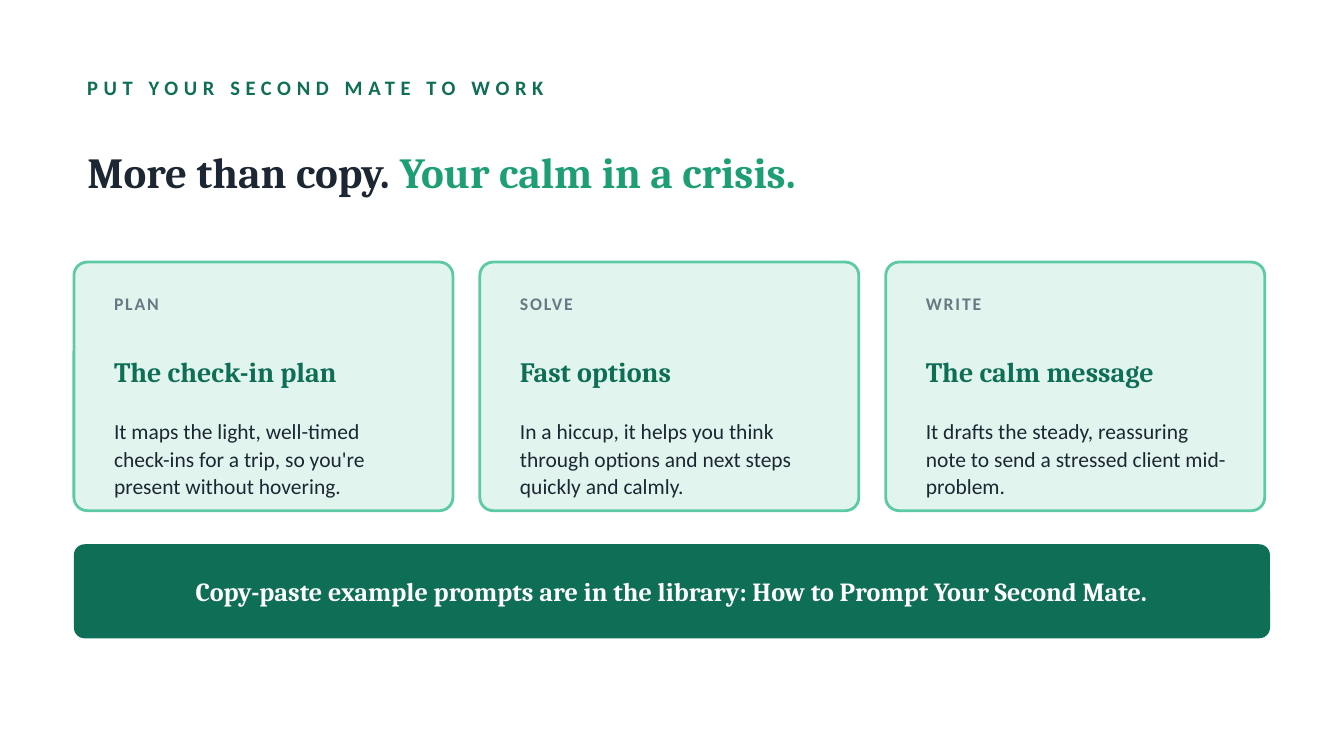
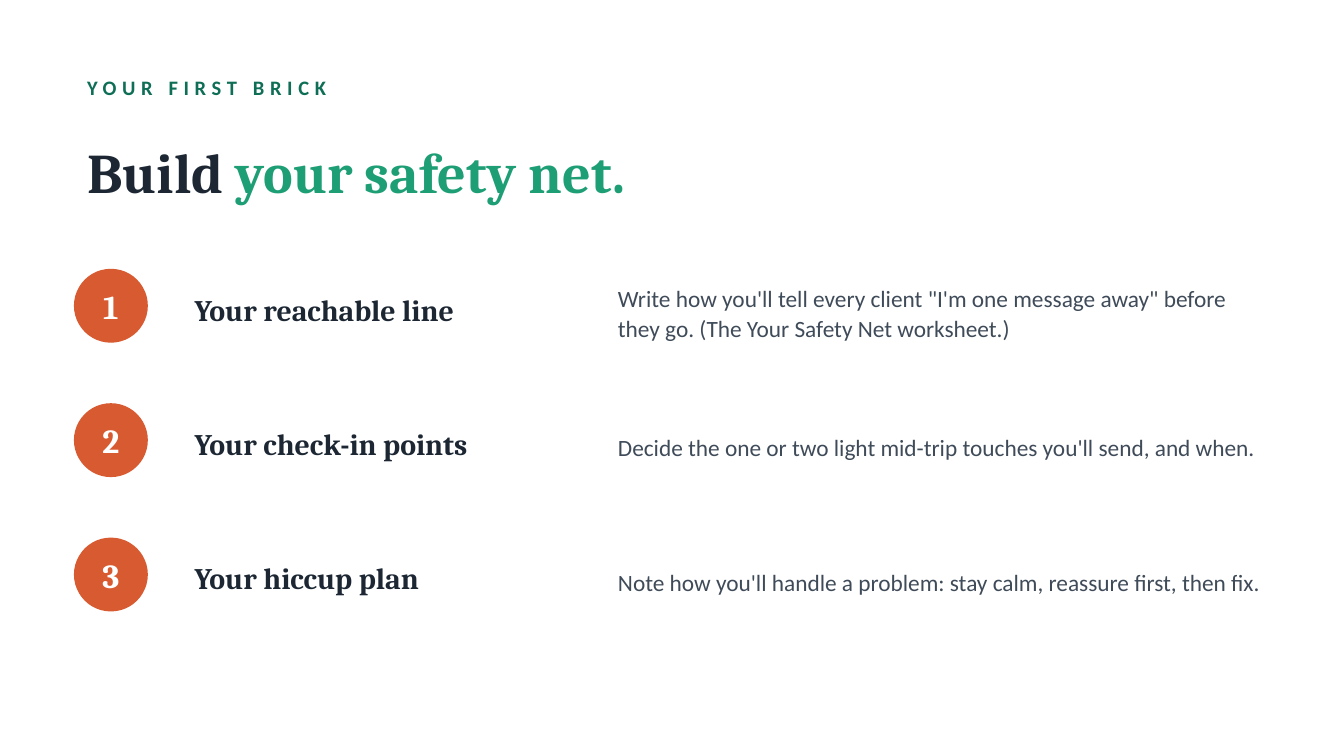
from pptx import Presentation
from pptx.dml.color import RGBColor
from pptx.enum.shapes import MSO_SHAPE as Shape
from pptx.enum.text import MSO_ANCHOR as Anchor, MSO_AUTO_SIZE as AutoSize, PP_ALIGN as Align
from pptx.util import Inches, Pt

# Palette
WHITE = RGBColor(0xFF, 0xFF, 0xFF)
INK = RGBColor(0x1C, 0x27, 0x33)
SLATE = RGBColor(0x3F, 0x4B, 0x59)
GRAY = RGBColor(0x6B, 0x77, 0x85)
PINE = RGBColor(0x0F, 0x6E, 0x56)
GREEN = RGBColor(0x1D, 0x9E, 0x75)
MINT = RGBColor(0x5D, 0xCA, 0xA5)
PALE = RGBColor(0xE1, 0xF5, 0xEE)
ORANGE = RGBColor(0xD8, 0x5A, 0x30)

# Shared fonts and grid
SERIF, SANS = "Cambria", "Calibri"
LEFT, WIDTH = 0.55, 8.9


def style(size, color, name=SERIF, bold=True, spc=0):
    return {"font": {"size": Pt(size), "name": name, "bold": bold},
            "color": color, "spc": spc}


EYEBROW = style(11, PINE, SANS, spc=3)
CARD_TAG = style(9.5, GRAY, SANS, spc=1)
CARD_HEAD = style(15, PINE)
CARD_BODY = style(11.5, INK, SANS, bold=False)
BANNER = style(14, WHITE)
NUMBER = style(18, WHITE)
STEP_HEAD = style(16, INK)
STEP_BODY = style(12.5, SLATE, SANS, bold=False)


class Deck:
    """Holds the presentation style and the slide being built."""

    def __init__(self, width):
        self.prs = Presentation()
        self.prs.slide_width = Inches(width)
        self.prs.slide_height = Inches(width * 9 / 16)
        self.s = None

    def slide(self, eyebrow, title, accent, size):
        self.s = self.prs.slides.add_slide(self.prs.slide_layouts[5])
        sp = self.s.shapes.title
        box = (LEFT, 0.85, WIDTH, 0.85)
        for attr, value in zip(("left", "top", "width", "height"), box):
            setattr(sp, attr, Inches(value))
        self.fill_text(sp, [(title, style(size, INK)), (accent, style(size, GREEN))])
        self.text(eyebrow, EYEBROW, LEFT, 0.5, WIDTH, 0.3)

    def fill_text(self, sp, runs, align=Align.LEFT, spacing=1.0):
        tf = sp.text_frame
        frame = {"word_wrap": True, "auto_size": AutoSize.NONE,
                 "vertical_anchor": Anchor.MIDDLE}
        for attr, value in frame.items():
            setattr(tf, attr, value)
        p = tf.paragraphs[0]
        p.alignment, p.line_spacing = align, spacing
        for text, fmt in runs:
            r = p.add_run()
            r.text = text
            for attr, value in fmt["font"].items():
                setattr(r.font, attr, value)
            r.font.color.rgb = fmt["color"]
            if fmt["spc"]:
                r.font._element.set("spc", str(fmt["spc"] * 100))

    def text(self, text, fmt, x, y, w, h, **para):
        sp = self.s.shapes.add_textbox(Inches(x), Inches(y), Inches(w), Inches(h))
        self.fill_text(sp, [(text, fmt)], **para)

    def shape(self, kind, fill, x, y, w, h, line=None, radius=None):
        sp = self.s.shapes.add_shape(kind, Inches(x), Inches(y), Inches(w), Inches(h))
        sp.shadow.inherit = False
        sp.fill.solid()
        sp.fill.fore_color.rgb = fill
        if line:
            sp.line.color.rgb = line
            sp.line.width = Pt(1.5)
        else:
            sp.line.fill.background()
        if radius:
            sp.adjustments[0] = radius / min(w, h)

    def card(self, x, tag, head, body):
        self.shape(Shape.ROUNDED_RECTANGLE, PALE, x, 1.95, 2.82, 1.85, MINT, 0.1)
        x, w = x + 0.2, 2.45
        self.text(tag, CARD_TAG, x, 2.11, w, 0.3)
        self.text(head, CARD_HEAD, x, 2.41, w, 0.7)
        self.text(body, CARD_BODY, x, 3.13, w, 0.55, spacing=1.08)

    def banner(self, text):
        y, h = 4.05, 0.7
        self.shape(Shape.ROUNDED_RECTANGLE, PINE, LEFT, y, WIDTH, h, radius=0.08)
        self.text(text, BANNER, LEFT + 0.25, y, WIDTH - 0.5, h, align=Align.CENTER)

    def step(self, y, number, head, body):
        badge = (LEFT, y + 0.05, 0.55, 0.55)
        self.shape(Shape.OVAL, ORANGE, *badge)
        self.text(str(number), NUMBER, *badge, align=Align.CENTER)
        self.text(head, STEP_HEAD, 1.35, y, 3, 0.7)
        self.text(body, STEP_BODY, 4.5, y, 5, 0.75, spacing=1.05)


def main():
    deck = Deck(10)

    # Slide 1: three cards and a banner
    deck.slide("PUT YOUR SECOND MATE TO WORK",
               "More than copy. ", "Your calm in a crisis.", 23)
    cards = [
        ("PLAN", "The check-in plan",
         "It maps the light, well-timed check-ins for a trip, "
         "so you're present without hovering."),
        ("SOLVE", "Fast options",
         "In a hiccup, it helps you think through options and next steps "
         "quickly and calmly."),
        ("WRITE", "The calm message",
         "It drafts the steady, reassuring note to send a stressed client mid-problem."),
    ]
    for i, card in enumerate(cards):
        deck.card(LEFT + i * 3.02, *card)
    deck.banner("Copy-paste example prompts are in the library: "
                "How to Prompt Your Second Mate.")

    # Slide 2: numbered steps
    deck.slide("YOUR FIRST BRICK", "Build ", "your safety net.", 30)
    steps = [
        ("Your reachable line",
         "Write how you'll tell every client \"I'm one message away\" before they go. "
         "(The Your Safety Net worksheet.)"),
        ("Your check-in points",
         "Decide the one or two light mid-trip touches you'll send, and when."),
        ("Your hiccup plan",
         "Note how you'll handle a problem: stay calm, reassure first, then fix."),
    ]
    for i, (head, body) in enumerate(steps):
        deck.step(1.95 + i, i + 1, head, body)

    deck.prs.save("out.pptx")


if __name__ == "__main__":
    main()
